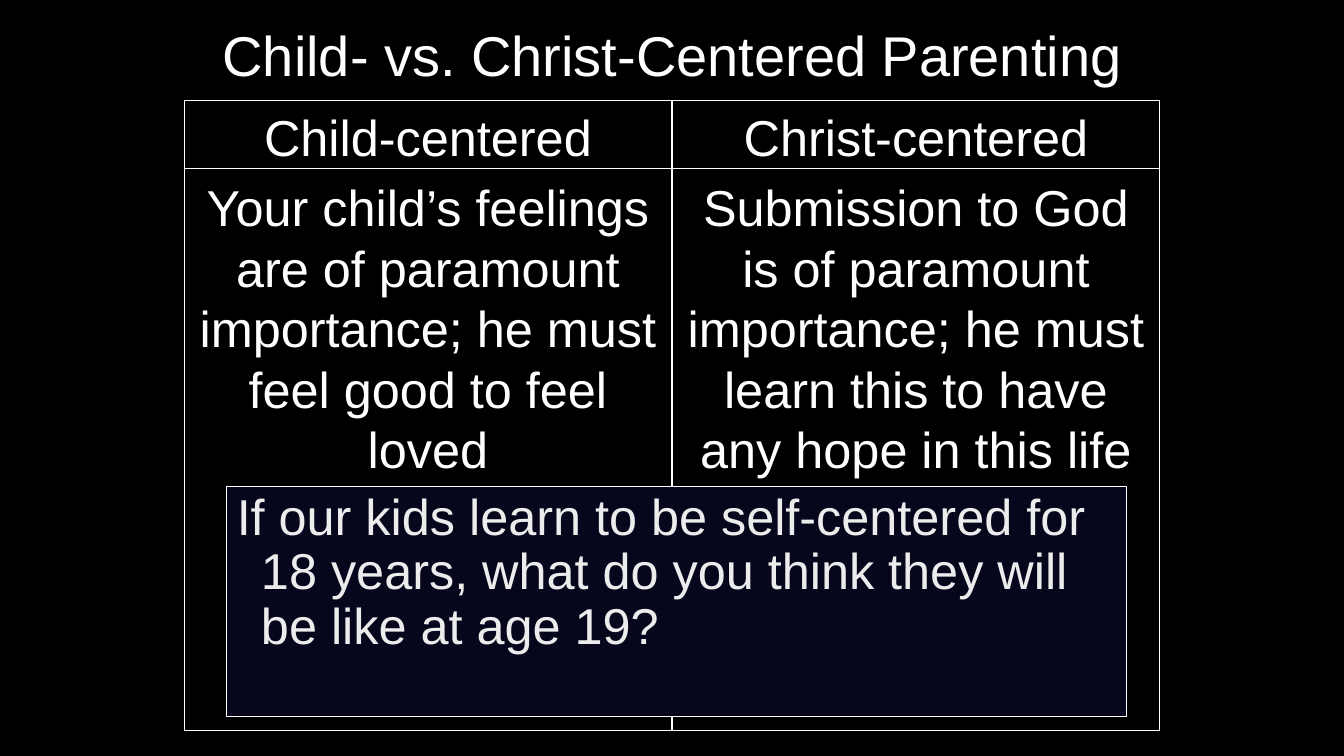
from pptx import Presentation
from pptx.dml.color import RGBColor
from pptx.enum import shapes, text
from pptx.oxml import ns
from pptx.util import Inches, Pt
from lxml import etree

BLACK = RGBColor(0x00, 0x00, 0x00)
WHITE = RGBColor(0xFF, 0xFF, 0xFF)
NAVY = RGBColor(0x06, 0x06, 0x1C)
PALE = RGBColor(0xEC, 0xEC, 0xEC)

LEFT, TOP, COL_W, COL_H = 1.83, 1, 4.83, 6.25
RIGHT = 11.5
COLUMNS = [
    (LEFT, "Child-centered",
     "Your child’s feelings are of paramount importance; he must feel good to feel loved"),
    (RIGHT - COL_W, "Christ-centered",
     "Submission to God is of paramount importance; he must learn this to have any hope in this life"),
]


def add_box(s, x, y, w, h):
    sp = s.shapes.add_shape(shapes.MSO_SHAPE.RECTANGLE, Inches(x), Inches(y), Inches(w), Inches(h))
    sp.shadow.inherit = False
    sp.fill.background()
    sp.line.color.rgb = WHITE
    sp.line.width = Pt(0.75)
    sp.text_frame.word_wrap = True
    sp.text_frame.vertical_anchor = text.MSO_ANCHOR.TOP
    return sp


def write(p, words, size, color, align):
    p.text = words
    p.alignment = align
    p.font.name = "Arial"
    p.font.size = Pt(size)
    p.font.color.rgb = color


prs = Presentation()
prs.slide_width = Inches(13.33)
prs.slide_height = Inches(7.5)
s = prs.slides.add_slide(prs.slide_layouts[6])
s.background.fill.solid()
s.background.fill.fore_color.rgb = BLACK

title = s.shapes.add_textbox(Inches(LEFT), Inches(0.08), Inches(RIGHT - LEFT), Inches(0.92))
tf = title.text_frame
tf.word_wrap = True
tf.vertical_anchor = text.MSO_ANCHOR.MIDDLE
write(tf.paragraphs[0], "Child- vs. Christ-Centered Parenting", 40, WHITE, text.PP_ALIGN.CENTER)

for x, heading, body in COLUMNS:
    tf = add_box(s, x, TOP, COL_W, COL_H).text_frame
    for p, words in ((tf.paragraphs[0], heading), (tf.add_paragraph(), body)):
        write(p, words, 36, WHITE, text.PP_ALIGN.CENTER)
        p.space_before = Pt(7.2)

rule = s.shapes.add_connector(shapes.MSO_CONNECTOR.STRAIGHT,
                              Inches(LEFT), Inches(1.67), Inches(RIGHT), Inches(1.67))
rule.line.color.rgb = WHITE
rule.line.width = Pt(0.75)
etree.SubElement(rule._element.spPr, ns.qn("a:effectLst"))

question = add_box(s, 2.25, 4.83, 8.92, 2.28)
question.fill.solid()
question.fill.fore_color.rgb = NAVY
p = question.text_frame.paragraphs[0]
write(p, "If our kids learn to be self-centered for 18 years, what do you think they will be like at age 19?",
      36, PALE, text.PP_ALIGN.LEFT)
p.line_spacing = 0.9
pPr = p._p.get_or_add_pPr()
pPr.set("marL", str(Inches(0.24)))
pPr.set("indent", str(Inches(-0.24)))

prs.save("out.pptx")
